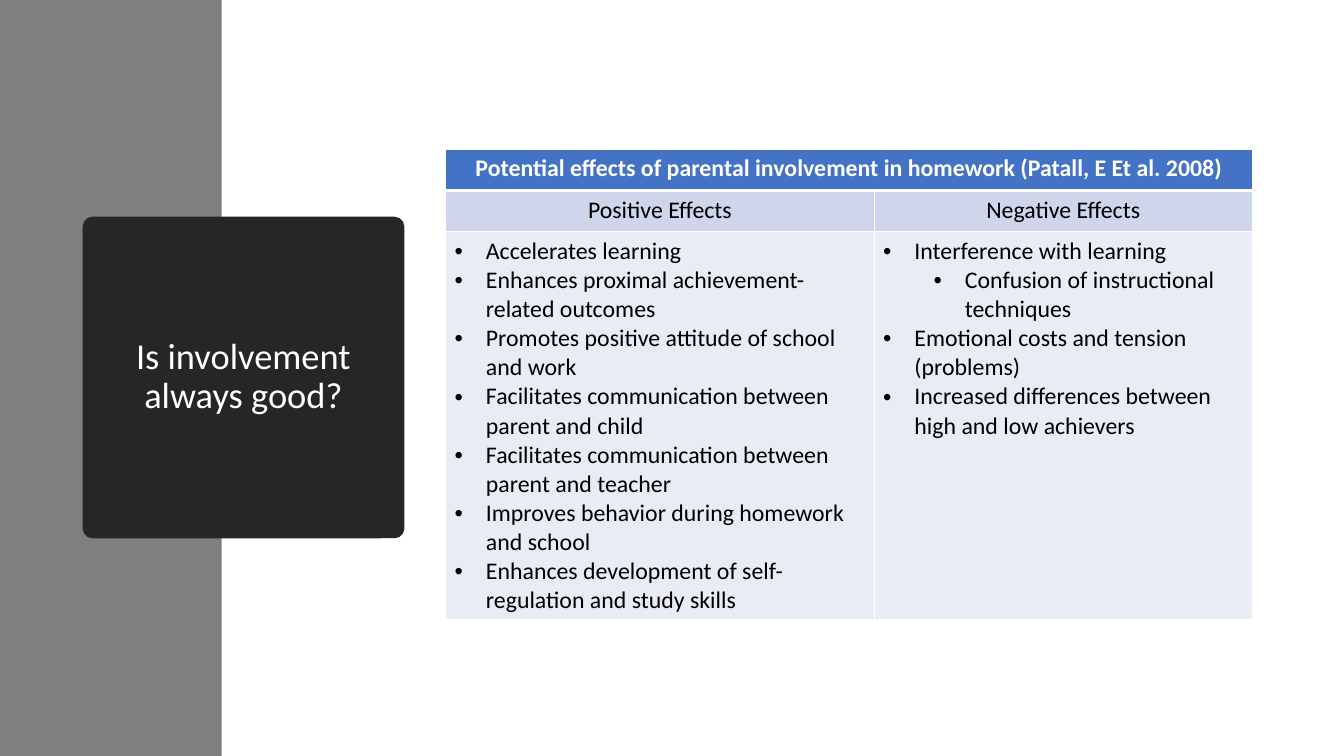
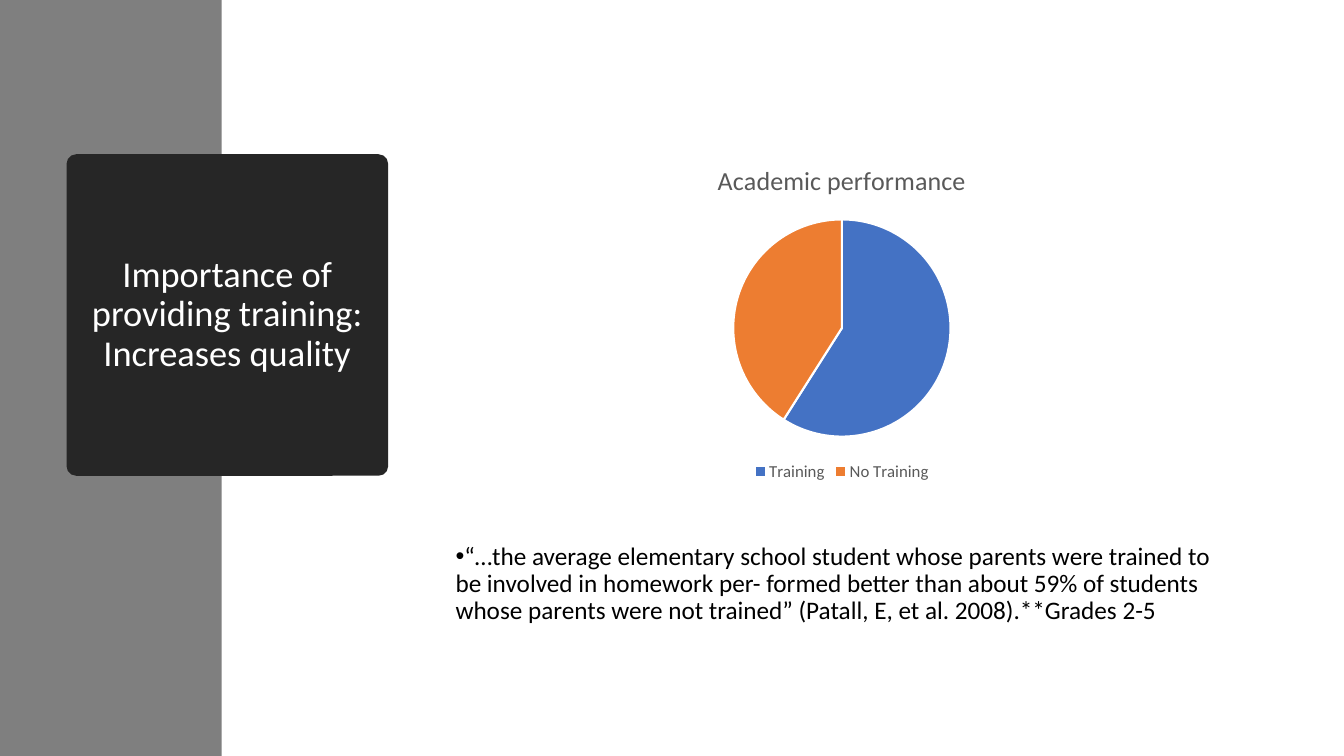
"""Builds two slides on parental involvement in homework: an effects table and a pie chart."""
from lxml.etree import SubElement
from pptx import Presentation
from pptx.chart.data import CategoryChartData
from pptx.dml.color import RGBColor
from pptx.enum.chart import XL_CHART_TYPE as CHART, XL_LEGEND_POSITION as LEGEND
from pptx.enum.shapes import MSO_SHAPE as SHAPE
from pptx.enum.text import MSO_ANCHOR as ANCHOR, PP_ALIGN as ALIGN
from pptx.oxml import parse_xml
from pptx.oxml.ns import nsdecls, qn
from pptx.util import Inches, Pt

FONT = "Calibri"
WHITE, BLACK, GRAY, DARK, MUTED = "FFFFFF", "000000", "7F7F7F", "262626", "595959"
BLUE, ORANGE, BAND, PALE = "4472C4", "ED7D31", "CFD5EA", "E9EBF5"
LEFT = Inches(4.42)


def rgb(color):
    return RGBColor.from_string(color)


def write(tf, text, size=17, color=BLACK, bold=False, align=ALIGN.LEFT,
          spacing=None, after=None, level=0, bullet=None):
    p = tf.paragraphs[0] if not tf.text else tf.add_paragraph()
    p.alignment, p.level = align, level
    p.line_spacing, p.space_after = spacing, after
    if bullet:
        margin, indent = bullet
        pPr = p._p.get_or_add_pPr()
        pPr.set("marL", str(Inches(margin)))
        pPr.set("indent", str(Inches(indent)))
        SubElement(pPr, qn("a:buFont")).set("typeface", "Arial")
        SubElement(pPr, qn("a:buChar")).set("char", "•")
    r = p.add_run()
    r.text = text
    r.font.name, r.font.size, r.font.bold = FONT, Pt(size), bold
    r.font.color.rgb = rgb(color)


prs = Presentation()
prs.slide_width, prs.slide_height = Inches(13.33), Inches(7.5)

slides = []
for title, x, y in [
    ("Is involvement always good?", 0.82, 2.15),
    ("Importance of providing training: Increases quality", 0.66, 1.53),
]:
    s = prs.slides.add_slide(prs.slide_layouts[6])
    slides.append(s)
    band = s.shapes.add_shape(SHAPE.RECTANGLE, 0, 0, Inches(2.2), prs.slide_height)
    card = s.shapes.add_shape(SHAPE.ROUNDED_RECTANGLE, Inches(x), Inches(y), Inches(3.19), Inches(3.19))
    card.adjustments[0] = 0.03
    for sp, color in [(band, GRAY), (card, DARK)]:
        sp.shadow.inherit = False
        sp.fill.solid()
        sp.fill.fore_color.rgb = rgb(color)
        sp.line.fill.background()
    tf = card.text_frame
    tf.word_wrap, tf.vertical_anchor = True, ANCHOR.MIDDLE
    tf.margin_left = tf.margin_right = Inches(0.2)
    write(tf, title, size=26, color=WHITE, align=ALIGN.CENTER, spacing=0.9)

effects_slide, training_slide = slides

positive = [
    "Accelerates learning",
    "Enhances proximal achievement-related outcomes",
    "Promotes positive attitude of school and work",
    "Facilitates communication between parent and child",
    "Facilitates communication between parent and teacher",
    "Improves behavior during homework and school",
    "Enhances development of self-regulation and study skills",
]
negative = [
    "Interference with learning",
    ("Confusion of instructional techniques", 1),
    "Emotional costs and tension (problems)",
    "Increased differences between high and low achievers",
]

table = effects_slide.shapes.add_table(3, 2, LEFT, Inches(1.48), Inches(8), Inches(4.55)).table
for col, width in zip(table.columns, [4.25, 3.75]):
    col.width = Inches(width)
for row, height in zip(table.rows, [0.41, 0.41, 3.73]):
    row.height = Inches(height)
table.cell(0, 0).merge(table.cell(0, 1))

write(table.cell(0, 0).text_frame,
      "Potential effects of parental involvement in homework (Patall, E Et al. 2008)",
      color=WHITE, bold=True, align=ALIGN.CENTER)
for j, (heading, effects) in enumerate([("Positive Effects", positive), ("Negative Effects", negative)]):
    write(table.cell(1, j).text_frame, heading, align=ALIGN.CENTER)
    for effect in effects:
        text, level = effect if isinstance(effect, tuple) else (effect, 0)
        write(table.cell(2, j).text_frame, text, level=level, bullet=(0.31 + 0.5 * level, -0.31))

for i, color in enumerate([BLUE, BAND, PALE]):
    for j in range(2):
        cell = table.cell(i, j)
        cell.margin_left = cell.margin_right = Inches(0.09)
        cell.fill.solid()
        cell.fill.fore_color.rgb = rgb(color)
        widths = {"L": 1, "R": 1, "T": 3 if i == 1 else 1, "B": 3 if i == 0 else 1}
        for k, (side, width) in enumerate(widths.items()):
            cell._tc.get_or_add_tcPr().insert(k, parse_xml(
                f'<a:ln{side} {nsdecls("a")} w="{Pt(width)}"><a:solidFill>'
                f'<a:srgbClr val="{WHITE}"/></a:solidFill></a:ln{side}>'))

data = CategoryChartData()
data.categories = ["Training", "No Training"]
data.add_series("Academic performance", [59, 41])
chart = training_slide.shapes.add_chart(
    CHART.PIE, LEFT, Inches(1.44), Inches(7.86), Inches(3.38), data).chart
chart.font.name, chart.font.size = FONT, Pt(10)
chart.has_title = True
write(chart.chart_title.text_frame, "Academic performance", size=18.6, color=MUTED, align=ALIGN.CENTER)
chart.chart_title.include_in_layout = False
chart.has_legend = True
legend = chart.legend
legend.position, legend.include_in_layout = LEGEND.BOTTOM, False
legend.font.name, legend.font.size = FONT, Pt(12)
legend.font.color.rgb = rgb(MUTED)
plot = chart.plots[0]
plot.vary_by_categories = True
for i, color in enumerate([BLUE, ORANGE]):
    fmt = plot.series[0].points[i].format
    fmt.fill.solid()
    fmt.fill.fore_color.rgb = rgb(color)
    fmt.line.color.rgb = rgb(WHITE)
    fmt.line.width = Pt(1.5)

quote = training_slide.shapes.add_textbox(LEFT, Inches(5.34), Inches(7.86), Inches(1.41))
quote.text_frame.word_wrap = True
write(quote.text_frame,
      "“…the average elementary school student whose parents were trained to be involved in "
      "homework per- formed better than about 59% of students whose parents were not trained” "
      "(Patall, E, et al. 2008).**Grades 2-5",
      size=18, spacing=0.9, after=Pt(6), bullet=(0, -0.25))

prs.save("out.pptx")
